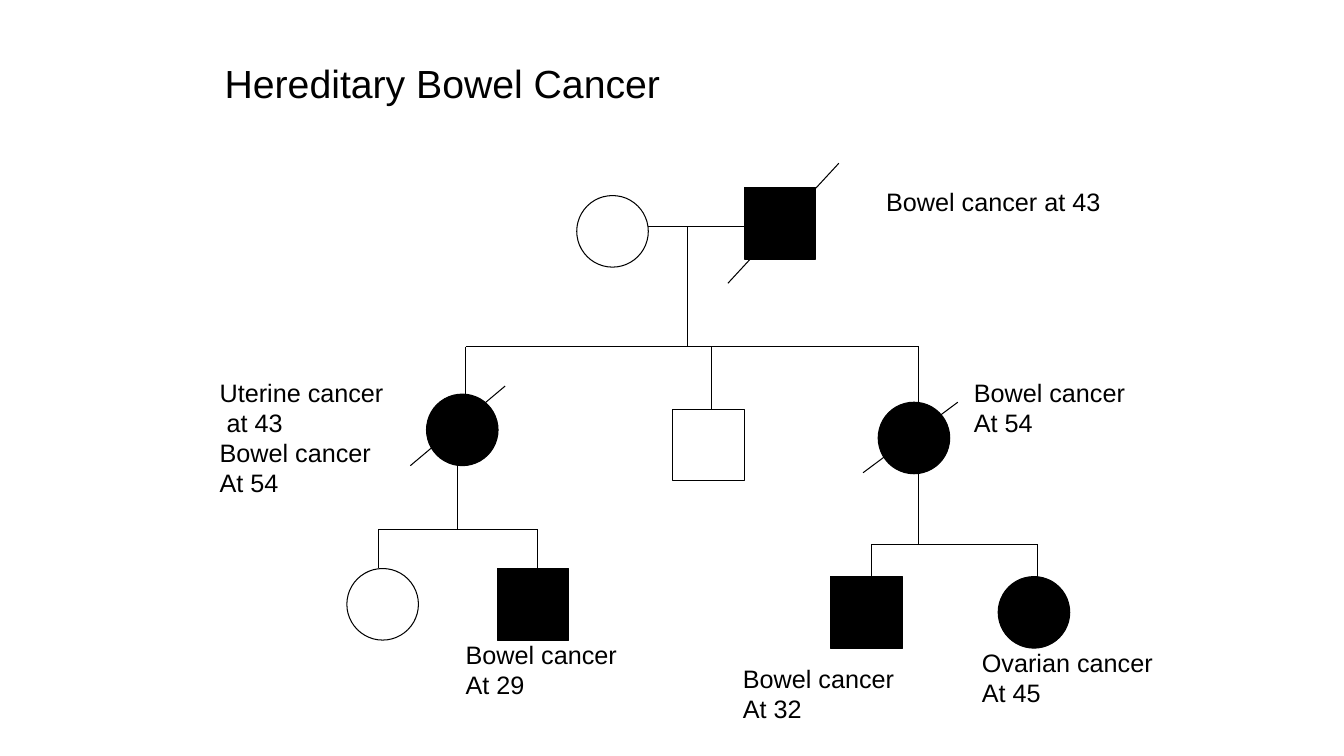
import pptx
import pptx.util
import pptx.dml.color
import pptx.enum.shapes
import pptx.enum.text
import pptx.oxml.ns
import lxml.etree

SLIDE_COLUMNS, SLIDE_ROWS = 133.3, 75
CELL = pptx.util.Inches(0.1)
PERSON_SIZE = 7.1

THEME = {
    "font": "Arial",
    "ink": pptx.dml.color.RGBColor(0, 0, 0),
    "title_size": pptx.util.Pt(28),
    "label_size": pptx.util.Pt(18),
    "line_width": pptx.util.Pt(0.75),
}

TITLE = (21.3, 5.4, 45.3, 5.7, ["Hereditary Bowel Cancer"])

LABELS = [
    (86.9, 18, 23.3, 4, ["Bowel cancer at 43"]),
    (20.8, 36.9, 18.3, 13, ["Uterine cancer", " at 43", "Bowel cancer", "At 54"]),
    (95.6, 36.9, 17, 7, ["Bowel cancer", "At 54"]),
    (72.7, 65.3, 17, 7, ["Bowel cancer", "At 32"]),
    (96.4, 63.7, 19, 7, ["Ovarian cancer", "At 45"]),
    (45.2, 62.9, 17, 7, ["Bowel cancer", "At 29"]),
]

PEOPLE = [
    ("female", "healthy", 57.2, 19.4),
    ("male", "affected", 73.8, 18.6),
    ("female", "affected", 42.3, 39.1),
    ("male", "healthy", 66.7, 40.6),
    ("female", "affected", 87.1, 39.9),
    ("female", "healthy", 34.4, 56.4),
    ("male", "affected", 49.3, 56.4),
    ("male", "affected", 82.4, 57.2),
    ("female", "affected", 99, 57.2),
]

COUPLE = (64.3, 22.5, 73.8, 22.5)

FAMILIES = [
    {"stem": (68.2, 22.5), "bar": 34.4, "children": [(46.2, 39.1), (70.6, 40.6), (91.1, 39.9)]},
    {"stem": (45.4, 46.2), "bar": 52.5, "children": [(37.5, 56.4), (53.3, 56.4)]},
    {"stem": (91.1, 46.9), "bar": 54, "children": [(86.4, 57.2), (102.9, 57.2)]},
]

DECEASED_STROKES = [
    (83.2, 16.2, 72.2, 28.1),
    (95, 39.9, 85.6, 46.9),
    (50.1, 38.3, 40.7, 46.2),
]

SYMBOLS = {
    "female": pptx.enum.shapes.MSO_SHAPE.OVAL,
    "male": pptx.enum.shapes.MSO_SHAPE.RECTANGLE,
}


def grid(*lengths):
    return [round(length * CELL) for length in lengths]


def set_line(line):
    line.color.rgb = THEME["ink"]
    line.width = THEME["line_width"]


def add_person(slide, sex, status, left, top):
    shape = slide.shapes.add_shape(SYMBOLS[sex], *grid(left, top, PERSON_SIZE, PERSON_SIZE))
    shape.shadow.inherit = False
    if status == "affected":
        shape.fill.solid()
        shape.fill.fore_color.rgb = THEME["ink"]
    else:
        shape.fill.background()
    set_line(shape.line)


def add_line(slide, *ends):
    connector = slide.shapes.add_connector(pptx.enum.shapes.MSO_CONNECTOR.STRAIGHT, *grid(*ends))
    set_line(connector.line)
    lxml.etree.SubElement(connector._element.spPr, pptx.oxml.ns.qn("a:effectLst"))


def add_family(slide, stem, bar, children):
    stem_x, stem_top = stem
    columns = [column for column, top in children]
    add_line(slide, stem_x, stem_top, stem_x, bar)
    add_line(slide, min(columns), bar, max(columns), bar)
    for column, top in children:
        add_line(slide, column, bar, column, top)


def add_text(slide, size, left, top, width, height, lines):
    frame = slide.shapes.add_textbox(*grid(left, top, width, height)).text_frame
    frame_format = {"word_wrap": False, "auto_size": pptx.enum.text.MSO_AUTO_SIZE.SHAPE_TO_FIT_TEXT}
    for name, value in frame_format.items():
        setattr(frame, name, value)
    frame.text = "\n".join(lines)
    for paragraph in frame.paragraphs:
        font = paragraph.runs[0].font
        for name, value in {"name": THEME["font"], "size": size}.items():
            setattr(font, name, value)
        font.color.rgb = THEME["ink"]


def main():
    presentation = pptx.Presentation()
    presentation.slide_width, presentation.slide_height = grid(SLIDE_COLUMNS, SLIDE_ROWS)
    slide = presentation.slides.add_slide(presentation.slide_layouts[6])
    for person in PEOPLE:
        add_person(slide, *person)
    for family in FAMILIES:
        add_family(slide, **family)
    for ends in [COUPLE, *DECEASED_STROKES]:
        add_line(slide, *ends)
    for label in LABELS:
        add_text(slide, THEME["label_size"], *label)
    add_text(slide, THEME["title_size"], *TITLE)
    presentation.save("out.pptx")


if __name__ == "__main__":
    main()
